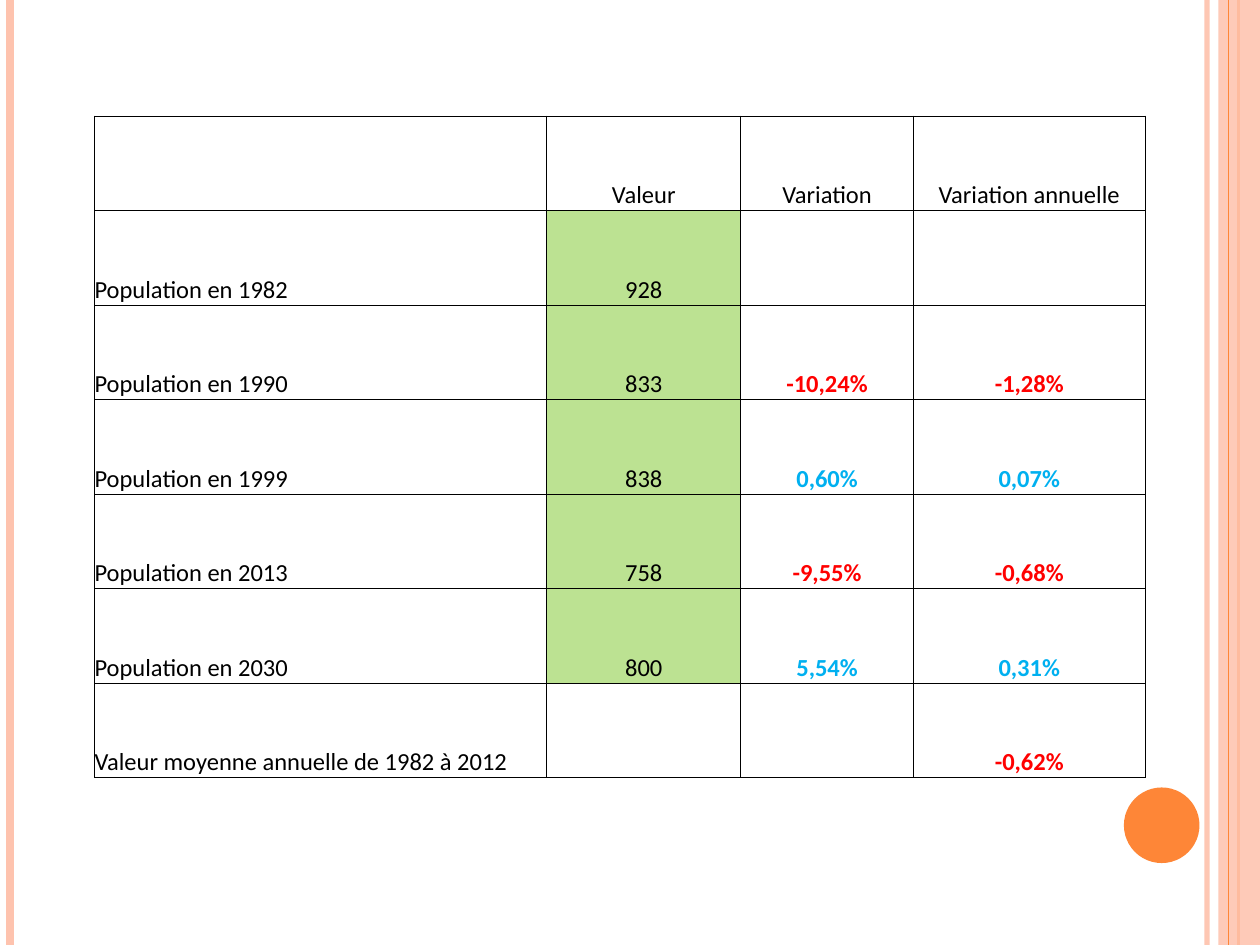
import dataclasses

import pptx
import pptx.dml.color
import pptx.enum.shapes
import pptx.enum.text
import pptx.oxml
import pptx.oxml.ns
import pptx.util

Inches = pptx.util.Inches
Rgb = pptx.dml.color.RGBColor.from_string
Shape = pptx.enum.shapes.MSO_SHAPE
Align = pptx.enum.text.PP_ALIGN
SPACE = pptx.oxml.ns.nsdecls("a")


@dataclasses.dataclass(frozen=True)
class Theme:
    """Colours, font and sizes of the slide."""
    peach: str = "FEC3AE"
    orange: str = "FE8637"
    green: str = "BCE292"
    ink: str = "000000"
    loss: str = "FF0000"
    gain: str = "00B0F0"
    font: str = "Calibri"
    size: float = 14
    rule: float = 0.5


class Page:
    """Holds the style and the current slide."""

    def __init__(self, deck, theme):
        self.theme = theme
        self.slide = deck.slides.add_slide(deck.slide_layouts[6])

    def fade(self, props, alpha):
        """Set the opacity, in percent, of a solid colour."""
        tint = next(props.iter(pptx.oxml.ns.qn("a:srgbClr")))
        tint.append(pptx.oxml.parse_xml(f'<a:alpha {SPACE} val="{alpha * 1000}"/>'))

    def stripe(self, left, color, width, alpha=100):
        """Draw a vertical line down the whole slide."""
        line = self.slide.shapes.add_connector(
            pptx.enum.shapes.MSO_CONNECTOR.STRAIGHT,
            Inches(left), 0, Inches(left), Inches(7.5))
        line.line.color.rgb = Rgb(color)
        line.line.width = pptx.util.Pt(width)
        props = line._element.spPr
        if alpha < 100:
            self.fade(props, alpha)
        props.append(pptx.oxml.parse_xml(f'<a:effectLst {SPACE}/>'))

    def block(self, kind, box, color, alpha=100):
        """Draw a plain filled shape."""
        shape = self.slide.shapes.add_shape(kind, *map(Inches, box))
        shape.shadow.inherit = False
        shape.fill.solid()
        shape.fill.fore_color.rgb = Rgb(color)
        shape.line.fill.background()
        if alpha < 100:
            self.fade(shape._element.spPr, alpha)

    def border(self, cell):
        """Rule all four sides of a cell."""
        props = cell._tc.get_or_add_tcPr()
        width = pptx.util.Pt(self.theme.rule)
        for side in "LRTB":
            props.append(pptx.oxml.parse_xml(
                f'<a:ln{side} {SPACE} w="{width}">'
                f'<a:solidFill><a:srgbClr val="{self.theme.ink}"/></a:solidFill>'
                f'</a:ln{side}>'))

    def label(self, cell, text, align):
        """Put styled text in a cell."""
        theme = self.theme
        para = cell.text_frame.paragraphs[0]
        para.alignment = align
        run = para.add_run()
        run.text = text
        rate = text.endswith("%")
        tone = theme.loss if text.startswith("-") else theme.gain
        look = {"name": theme.font, "size": pptx.util.Pt(theme.size), "bold": rate}
        for key, value in look.items():
            setattr(run.font, key, value)
        run.font.color.rgb = Rgb(tone if rate else theme.ink)

    def table(self, left, top, widths, height, rows):
        """Draw a ruled table with a shaded column of values."""
        frame = self.slide.shapes.add_table(
            len(rows), len(widths), Inches(left), Inches(top),
            Inches(sum(widths)), Inches(height * len(rows)))
        grid = frame.table
        for key in ("first_row", "horz_banding"):
            setattr(grid, key, False)
        for col, width in zip(grid.columns, widths):
            col.width = Inches(width)
        form = {"vertical_anchor": pptx.enum.text.MSO_ANCHOR.BOTTOM,
                "margin_left": 0, "margin_right": 0,
                "margin_top": 0, "margin_bottom": 0}
        for y, row in enumerate(rows):
            grid.rows[y].height = Inches(height)
            for x, text in enumerate(row):
                cell = grid.cell(y, x)
                for key, value in form.items():
                    setattr(cell, key, value)
                self.border(cell)
                if text.isdigit():
                    cell.fill.solid()
                    cell.fill.fore_color.rgb = Rgb(self.theme.green)
                else:
                    cell.fill.background()
                if text:
                    self.label(cell, text, Align.CENTER if x else Align.LEFT)


ROWS = [
    ("", "Valeur", "Variation", "Variation annuelle"),
    ("Population en 1982", "928", "", ""),
    ("Population en 1990", "833", "-10,24%", "-1,28%"),
    ("Population en 1999", "838", "0,60%", "0,07%"),
    ("Population en 2013", "758", "-9,55%", "-0,68%"),
    ("Population en 2030", "800", "5,54%", "0,31%"),
    ("Valeur moyenne annuelle de 1982 à 2012", "", "", "-0,62%"),
]


def main():
    """Build the slide and save it."""
    deck = pptx.Presentation()
    deck.slide_width, deck.slide_height = Inches(10), Inches(7.5)
    theme = Theme()
    page = Page(deck, theme)
    page.stripe(9.58, theme.peach, 3, 93)
    page.stripe(0.08, theme.peach, 4.5)
    page.stripe(9.83, theme.orange, 1.5)
    page.block(Shape.RECTANGLE, (9.67, 0, 0.33, 7.5), theme.peach, 87)
    page.stripe(9.75, theme.orange, 0.75)
    page.block(Shape.OVAL, (8.92, 6.25, 0.6, 0.6), theme.orange)
    page.table(0.75, 0.92, (3.59, 1.54, 1.37, 1.84), 0.75, ROWS)
    deck.save("out.pptx")


if __name__ == "__main__":
    main()
